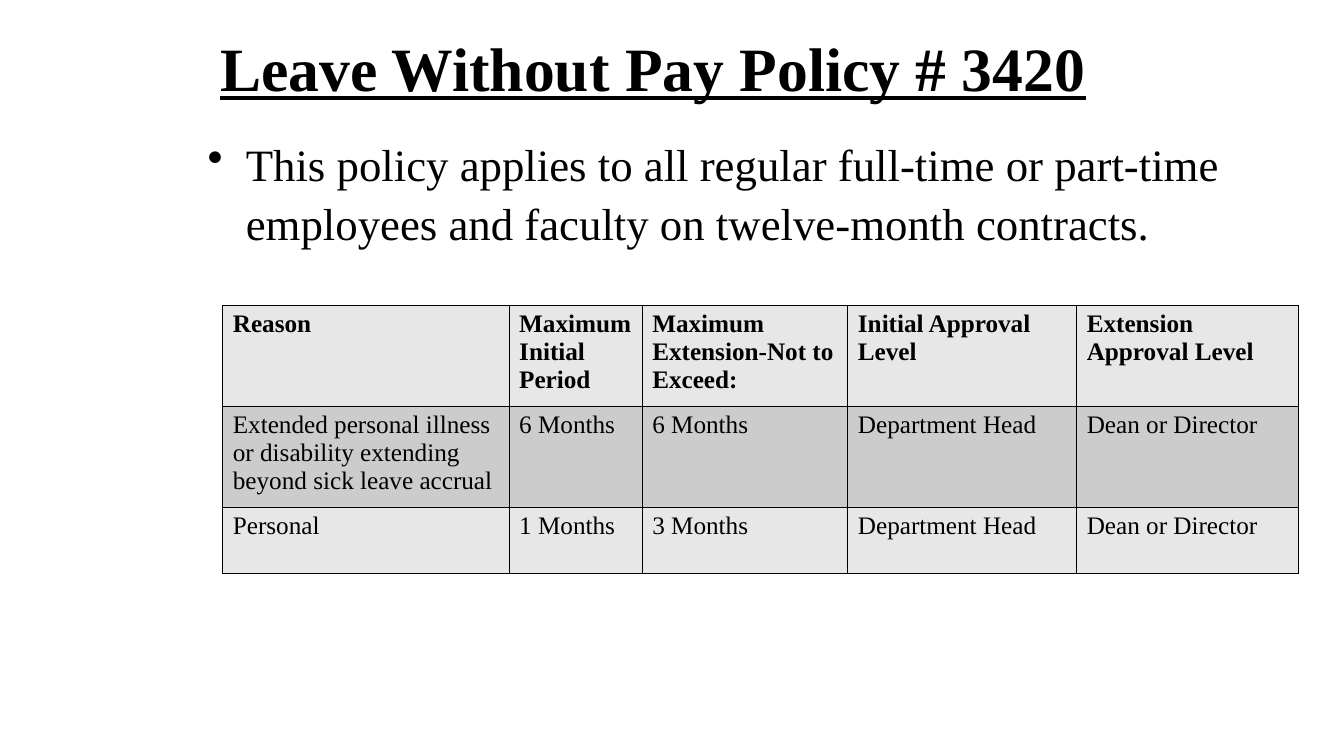
from dataclasses import dataclass

import lxml.etree
import pptx
import pptx.dml.color
import pptx.enum.text
import pptx.oxml.ns
import pptx.util

Inches = pptx.util.Inches
FONT = "Times New Roman"
BLACK = "000000"
LIGHT, DARK = "E7E7E7", "CCCCCC"


@dataclass
class Column:
    width: float
    texts: tuple[str, str, str]


@dataclass
class Row:
    height: float
    fill: str
    bold: bool


COLUMNS = [
    Column(2.84, ("Reason", "Extended personal illness or disability extending "
                  "beyond sick leave accrual", "Personal")),
    Column(1.32, ("Maximum Initial Period", "6 Months", "1 Months")),
    Column(2.04, ("Maximum Extension-Not to Exceed:", "6 Months", "3 Months")),
    Column(2.27, ("Initial Approval Level", "Department Head", "Department Head")),
    Column(2.2, ("Extension Approval Level", "Dean or Director", "Dean or Director")),
]
ROWS = [Row(0.93, LIGHT, True), Row(0.93, DARK, False), Row(0.66, LIGHT, False)]


def color(value: str) -> pptx.dml.color.RGBColor:
    return pptx.dml.color.RGBColor.from_string(value)


def add_child(parent, tag: str, **attributes: str):
    child = lxml.etree.SubElement(parent, pptx.oxml.ns.qn(tag))
    for name, value in attributes.items():
        child.set(name, value)
    return child


def format_runs(paragraph, size: float, bold: bool = False, underline: bool = False) -> None:
    for run in paragraph.runs:
        run.font.name = FONT
        run.font.size = pptx.util.Pt(size)
        run.font.bold = bold
        run.font.underline = underline
        run.font.color.rgb = color(BLACK)


def add_text(slide, left: float, top: float, width: float, height: float, text: str):
    frame = slide.shapes.add_textbox(
        Inches(left), Inches(top), Inches(width), Inches(height)).text_frame
    frame.word_wrap = True
    frame.text = text
    frame.paragraphs[0].line_spacing = 1.1
    return frame


def add_borders(cell) -> None:
    properties = cell._tc.get_or_add_tcPr()
    for side in ("a:lnL", "a:lnR", "a:lnT", "a:lnB"):
        line = add_child(properties, side, w=str(pptx.util.Pt(1)))
        add_child(add_child(line, "a:solidFill"), "a:srgbClr", val=BLACK)


def add_leave_table(slide) -> None:
    table = slide.shapes.add_table(
        len(ROWS), len(COLUMNS), Inches(2.21), Inches(3.03),
        Inches(sum(column.width for column in COLUMNS)),
        Inches(sum(row.height for row in ROWS))).table
    for r, row in enumerate(ROWS):
        table.rows[r].height = Inches(row.height)
        for c, column in enumerate(COLUMNS):
            table.columns[c].width = Inches(column.width)
            cell = table.cell(r, c)
            cell.text_frame.text = column.texts[r]
            format_runs(cell.text_frame.paragraphs[0], 18, row.bold)
            add_borders(cell)
            cell.fill.solid()
            cell.fill.fore_color.rgb = color(row.fill)


def main() -> None:
    deck = pptx.Presentation()
    deck.slide_width, deck.slide_height = Inches(13.33), Inches(7.5)
    slide = deck.slides.add_slide(deck.slide_layouts[6])

    # Title
    title = add_text(slide, 1.55, 0, 9.86, 1.25, "Leave Without Pay Policy # 3420")
    title.vertical_anchor = pptx.enum.text.MSO_ANCHOR.MIDDLE
    title.paragraphs[0].alignment = pptx.enum.text.PP_ALIGN.CENTER
    format_runs(title.paragraphs[0], 44, bold=True, underline=True)

    # Who the policy covers
    scope = add_text(slide, 1.96, 1.25, 11.22, 1.23,
                     "This policy applies to all regular full-time or part-time "
                     "employees and faculty on twelve-month contracts.").paragraphs[0]
    properties = scope._p.get_or_add_pPr()
    properties.set("marL", str(Inches(0.38)))
    properties.set("indent", str(Inches(-0.38)))
    add_child(properties, "a:buChar", char="•")
    format_runs(scope, 32)

    # Leave periods and approvals
    add_leave_table(slide)

    deck.save("out.pptx")


if __name__ == "__main__":
    main()
